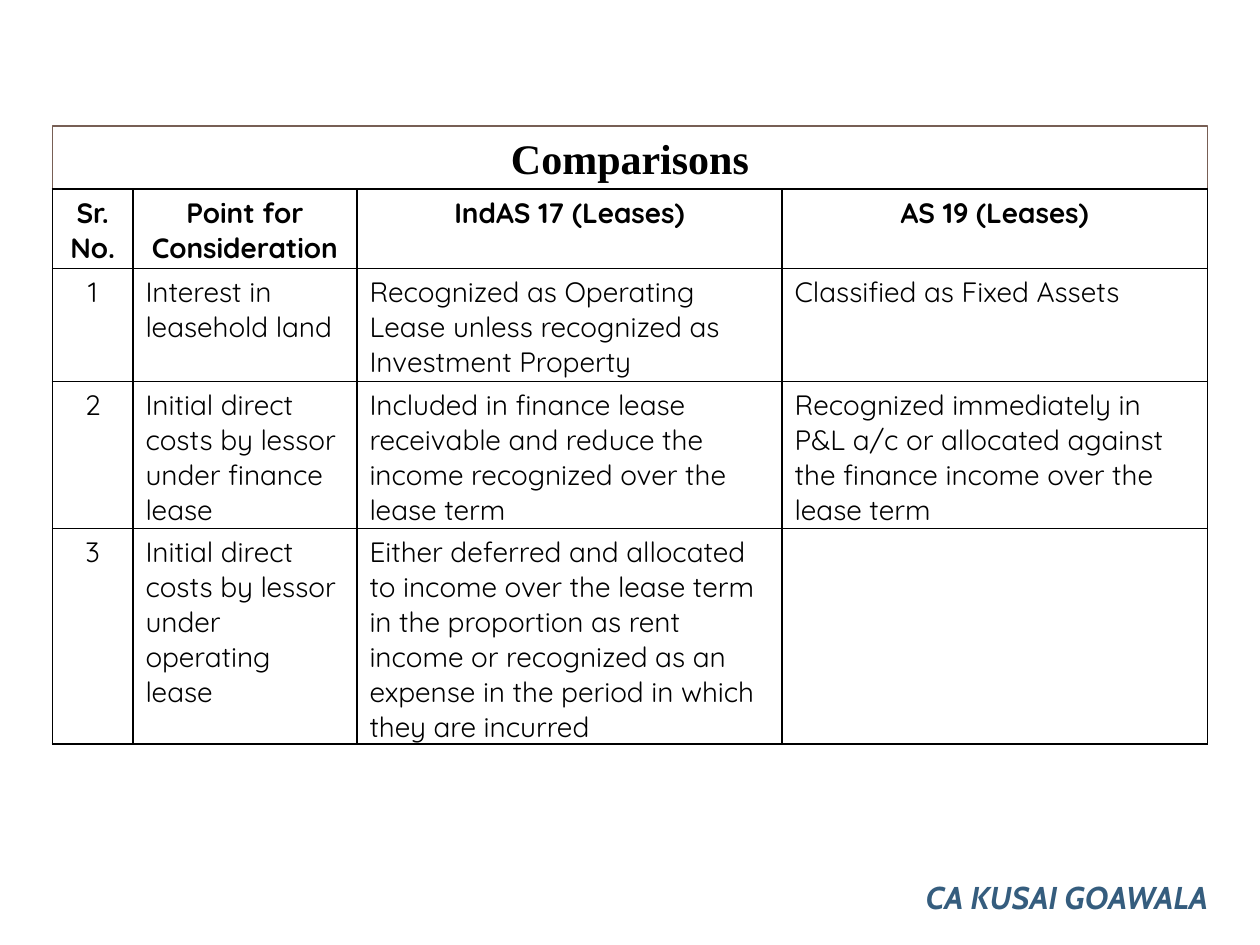
from dataclasses import dataclass

from lxml.etree import SubElement
from pptx import Presentation
from pptx.dml.color import RGBColor
from pptx.enum.text import MSO_ANCHOR, MSO_AUTO_SIZE, PP_ALIGN
from pptx.oxml.ns import qn
from pptx.util import Pt


@dataclass(frozen=True)
class Theme:
    ink: str = "000000"
    edge: str = "775F55"
    name: str = "355D7E"
    head: dict = None
    cell: dict = None
    sign: dict = None


THEME = Theme(
    head={"name": "Times New Roman", "size": Pt(24), "bold": True, "italic": False},
    cell={"name": "Quicksand", "size": Pt(16), "italic": False},
    sign={"name": "Cabin", "size": Pt(18), "bold": True, "italic": True},
)

LEFT, TOP, WIDE = 30, 72, 660
HEAD = 36.5
COLS = (46, 128, 243, 243)
HIGH = (45.5, 64.5, 84, 123)
ROWS = (
    ("Sr. No.", "Point for Consideration", "IndAS 17 (Leases)", "AS 19 (Leases)"),
    ("1", "Interest in leasehold land",
     "Recognized as Operating Lease unless recognized as Investment Property",
     "Classified as Fixed Assets"),
    ("2", "Initial direct costs by lessor under finance lease",
     "Included in finance lease receivable and reduce the income recognized "
     "over the lease term",
     "Recognized immediately in P&L a/c or allocated against the finance "
     "income over the lease term"),
    ("3", "Initial direct costs by lessor under operating lease",
     "Either deferred and allocated to income over the lease term in the "
     "proportion as rent income or recognized as an expense in the period in "
     "which they are incurred", ""),
)


def apply(item, form):
    for key, value in form.items():
        setattr(item, key, value)


def place(shape, left, top, wide, high):
    apply(shape, {"left": Pt(left), "top": Pt(top),
                  "width": Pt(wide), "height": Pt(high)})


def write(frame, text, font, color, align=PP_ALIGN.LEFT):
    para = frame.paragraphs[0]
    para.alignment = align
    if text:
        run = para.add_run()
        run.text = text
        apply(run.font, font)
        run.font.color.rgb = RGBColor.from_string(color)


def rule(cell):
    """Draw a thin line on all four sides of a cell."""
    props = cell._tc.get_or_add_tcPr()
    for side in ("lnL", "lnR", "lnT", "lnB"):
        line = SubElement(props, qn(f"a:{side}"), w=str(Pt(1)))
        fill = SubElement(line, qn("a:solidFill"))
        SubElement(fill, qn("a:srgbClr"), val=THEME.ink)


def add_title(slide):
    title = slide.shapes.title
    place(title, LEFT, TOP, WIDE, HEAD)
    title.line.color.rgb = RGBColor.from_string(THEME.edge)
    title.line.width = Pt(0.75)
    apply(title.text_frame, {"word_wrap": True, "auto_size": MSO_AUTO_SIZE.NONE,
                             "vertical_anchor": MSO_ANCHOR.MIDDLE})
    write(title.text_frame, "Comparisons", THEME.head, THEME.ink, PP_ALIGN.CENTER)


def add_grid(slide):
    table = slide.shapes.add_table(
        len(ROWS), len(COLS), Pt(LEFT), Pt(TOP + HEAD - 0.5),
        Pt(WIDE), Pt(sum(HIGH))).table
    apply(table, {"first_row": False, "horz_banding": False})
    for col, wide in zip(table.columns, COLS):
        col.width = Pt(wide)
    for r, (row, high, texts) in enumerate(zip(table.rows, HIGH, ROWS)):
        row.height = Pt(high)
        for c, (cell, text) in enumerate(zip(row.cells, texts)):
            apply(cell, {"margin_left": Pt(7.2), "margin_right": Pt(7.2),
                         "margin_top": Pt(3.6), "margin_bottom": Pt(0),
                         "vertical_anchor": MSO_ANCHOR.TOP})
            rule(cell)
            cell.fill.background()
            mid = r == 0 or c == 0
            write(cell.text_frame, text, {**THEME.cell, "bold": r == 0}, THEME.ink,
                  PP_ALIGN.CENTER if mid else PP_ALIGN.LEFT)


def add_sign(slide):
    box = slide.shapes.add_textbox(Pt(522), Pt(498), Pt(186), Pt(29))
    box.text_frame.word_wrap = True
    write(box.text_frame, "CA KUSAI GOAWALA", THEME.sign, THEME.name)


def main():
    deck = Presentation()
    apply(deck, {"slide_width": Pt(720), "slide_height": Pt(540)})
    slide = deck.slides.add_slide(deck.slide_layouts[5])
    # Heading bar
    add_title(slide)
    # Comparison table
    add_grid(slide)
    # Author line
    add_sign(slide)
    deck.save("out.pptx")


if __name__ == "__main__":
    main()
